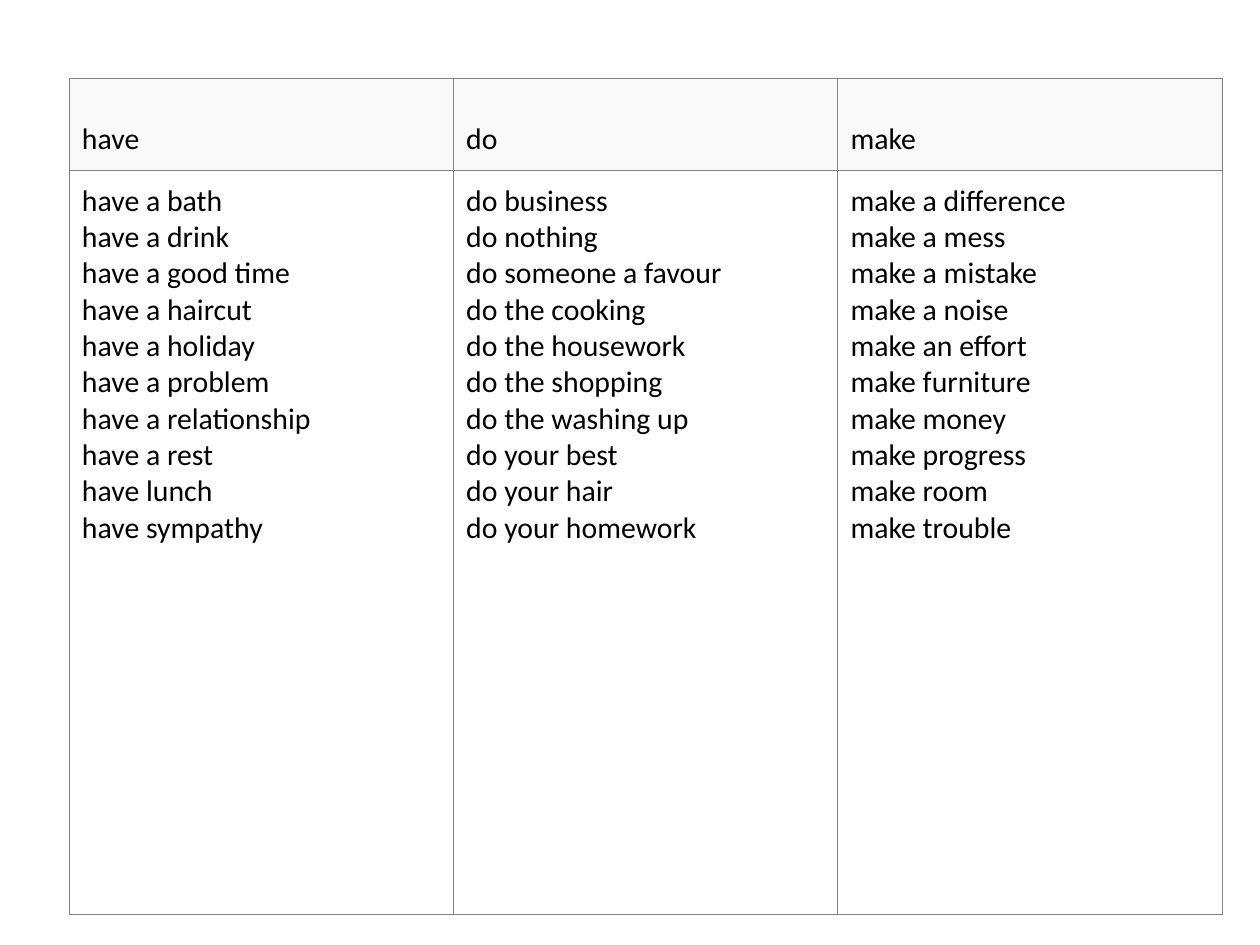
from dataclasses import dataclass

from lxml import etree
from pptx import Presentation
from pptx import util as u
from pptx.dml.color import RGBColor
from pptx.enum import text
from pptx.oxml import ns
from pptx.table import _Cell

COLORS = {"text": "000000", "border": "808080", "header": "F9F9F9", "body": "FFFFFF"}
BORDER_WIDTH = u.Pt(0.75)
LEFT, TOP = u.Inches(0.55), u.Inches(0.62)
COLUMN_WIDTH = u.Inches(3.05)
ROW_HEIGHTS = (u.Inches(0.73), u.Inches(5.91))


@dataclass(frozen=True)
class VerbColumn:
    verb: str
    endings: tuple[str, ...]

    @property
    def phrases(self) -> str:
        return "\n".join(f"{self.verb} {ending}" for ending in self.endings)


VERB_COLUMNS = (
    VerbColumn("have", (
        "a bath", "a drink", "a good time", "a haircut", "a holiday",
        "a problem", "a relationship", "a rest", "lunch", "sympathy",
    )),
    VerbColumn("do", (
        "business", "nothing", "someone a favour", "the cooking", "the housework",
        "the shopping", "the washing up", "your best", "your hair", "your homework",
    )),
    VerbColumn("make", (
        "a difference", "a mess", "a mistake", "a noise", "an effort",
        "furniture", "money", "progress", "room", "trouble",
    )),
)


def add_borders(cell: _Cell) -> None:
    """Draw all four sides; call before filling, as the schema puts lines first."""
    properties = cell._tc.get_or_add_tcPr()
    for side in ("a:lnL", "a:lnR", "a:lnT", "a:lnB"):
        line = etree.SubElement(properties, ns.qn(side), w=str(BORDER_WIDTH))
        fill = etree.SubElement(line, ns.qn("a:solidFill"))
        etree.SubElement(fill, ns.qn("a:srgbClr"), val=COLORS["border"])


def fill_cell(cell: _Cell, words: str, color: str, anchor: text.MSO_ANCHOR) -> None:
    add_borders(cell)
    cell.fill.solid()
    cell.fill.fore_color.rgb = RGBColor.from_string(COLORS[color])
    cell.margin_left = cell.margin_right = u.Inches(0.1)
    cell.margin_top = cell.margin_bottom = u.Inches(0.1)
    cell.vertical_anchor = anchor
    paragraph = cell.text_frame.paragraphs[0]
    paragraph.text = words
    paragraph.font.name = "Calibri"
    paragraph.font.size = u.Pt(17)
    paragraph.font.color.rgb = RGBColor.from_string(COLORS["text"])


def main() -> None:
    presentation = Presentation()
    presentation.slide_width, presentation.slide_height = u.Inches(10), u.Inches(7.5)
    slide = presentation.slides.add_slide(presentation.slide_layouts[6])

    table = slide.shapes.add_table(
        len(ROW_HEIGHTS), len(VERB_COLUMNS), LEFT, TOP,
        COLUMN_WIDTH * len(VERB_COLUMNS), sum(ROW_HEIGHTS),
    ).table
    table.first_row = table.horz_banding = False
    for row, height in zip(table.rows, ROW_HEIGHTS):
        row.height = height
    for index, column in enumerate(VERB_COLUMNS):
        table.columns[index].width = COLUMN_WIDTH
        fill_cell(table.cell(0, index), column.verb, "header", text.MSO_ANCHOR.BOTTOM)
        fill_cell(table.cell(1, index), column.phrases, "body", text.MSO_ANCHOR.TOP)

    presentation.save("out.pptx")


if __name__ == "__main__":
    main()
